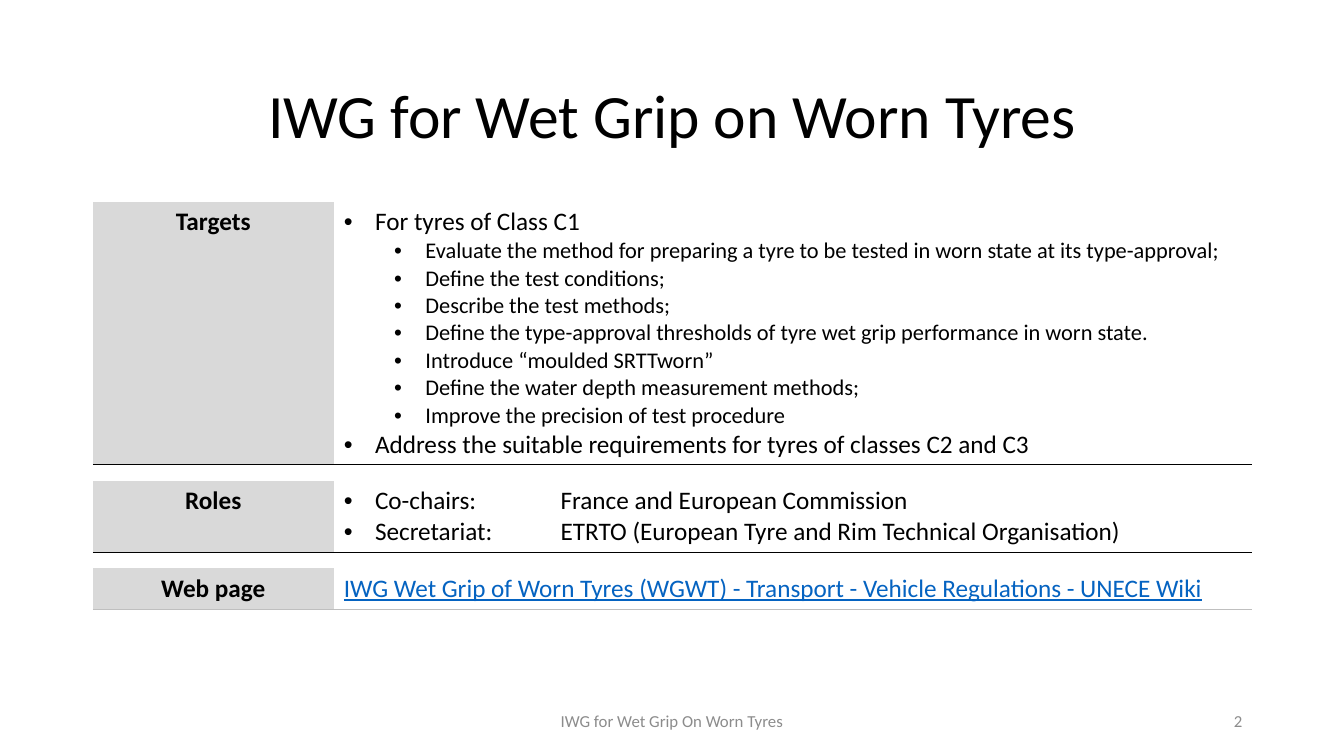
from dataclasses import dataclass
from lxml import etree
from pptx import Presentation
from pptx.dml.color import RGBColor
from pptx.enum.text import MSO_ANCHOR, PP_ALIGN
from pptx.oxml.ns import qn
from pptx.util import Inches, Pt

LEFT, MID, RIGHT = PP_ALIGN.LEFT, PP_ALIGN.CENTER, PP_ALIGN.RIGHT
MIDDLE = MSO_ANCHOR.MIDDLE

TITLE = "IWG for Wet Grip on Worn Tyres"
FOOTER = "IWG for Wet Grip On Worn Tyres"
PAGE = "2"
# Each line is (level, text); level None is plain linked text.
TARGETS = [
    (0, "For tyres of Class C1"),
    (1, "Evaluate the method for preparing a tyre to be tested in worn state at its type-approval;"),
    (1, "Define the test conditions;"),
    (1, "Describe the test methods;"),
    (1, "Define the type-approval thresholds of tyre wet grip performance in worn state."),
    (1, "Introduce “moulded SRTTworn”"),
    (1, "Define the water depth measurement methods;"),
    (1, "Improve the precision of test procedure"),
    (0, "Address the suitable requirements for tyres of classes C2 and C3"),
]
ROLES = [
    (0, "Co-chairs:\tFrance and European Commission"),
    (0, "Secretariat:\tETRTO (European Tyre and Rim Technical Organisation)"),
]
WEB = [(None, "IWG Wet Grip of Worn Tyres (WGWT) - Transport - Vehicle Regulations - UNECE Wiki")]


@dataclass(frozen=True)
class Theme:
    font: str = "Calibri"
    ink: str = "000000"
    link: str = "0563C1"
    label: str = "D9D9D9"
    pale: str = "BFBFBF"
    muted: str = "8C8C8C"
    title: int = 44
    body: int = 18
    sub: int = 16
    foot: int = 12
    gap: int = 4


THEME = Theme()
# Label, lines, row height, rule colour
ROWS = [
    ("Targets", TARGETS, 2.61, THEME.ink),
    ("Roles", ROLES, 0.71, THEME.ink),
    ("Web page", WEB, 0.41, THEME.pale),
]
WIDE, HIGH = 13.33, 7.5
EDGE, SPAN = 0.92, 11.5
TOP, GAP = 2, 0.16
COLS = (2.39, 9.11)
HANG, STEP, TAB = 0.31, 0.5, 2.15
FOOT_TOP, FOOT_HIGH = 6.95, 0.4
FOOT_WIDE, PAGE_WIDE = 4.5, 3
PLAIN = "{2D5ABB26-0587-4C30-8999-92F81FD0307C}"


def style(para, size, color, align=LEFT, bold=False, line=False):
    para.alignment = align
    for run in para.runs:
        font = run.font
        font.name, font.size = THEME.font, Pt(size)
        font.bold, font.underline = bold, line
        font.color.rgb = RGBColor.from_string(color)


def put(slide, text, box, size, color, align):
    """Add one line of text, centred in height."""
    frame = slide.shapes.add_textbox(*map(Inches, box)).text_frame
    frame.word_wrap = True
    frame.vertical_anchor = MIDDLE
    frame.text = text
    style(frame.paragraphs[0], size, color, align)


def bullet(para, level):
    props = para._p.get_or_add_pPr()
    props.set("marL", str(Inches(HANG + STEP * level)))
    props.set("indent", str(-Inches(HANG)))
    etree.SubElement(props, qn("a:buFont")).set("typeface", "Arial")
    etree.SubElement(props, qn("a:buChar")).set("char", "•")
    if "\t" in para.text:
        tabs = etree.SubElement(props, qn("a:tabLst"))
        tab = etree.SubElement(tabs, qn("a:tab"))
        tab.set("pos", str(Inches(TAB)))
        tab.set("algn", "l")


def rule(cell, color):
    """Draw the bottom border; the cell's fill comes after it in the XML."""
    props = cell._tc.get_or_add_tcPr()
    edge = etree.Element(qn("a:lnB"), w=str(Pt(1)))
    fill = etree.SubElement(edge, qn("a:solidFill"))
    etree.SubElement(fill, qn("a:srgbClr")).set("val", color)
    props.insert(0, edge)


def write(cell, lines):
    frame = cell.text_frame
    for i, (level, text) in enumerate(lines):
        para = frame.add_paragraph() if i else frame.paragraphs[0]
        para.text = text
        if level is None:
            style(para, THEME.body, THEME.link, line=True)
        else:
            bullet(para, level)
            style(para, THEME.sub if level else THEME.body, THEME.ink)


def shrink(cell):
    """Make an empty cell low enough for a gap row."""
    cell.margin_top = cell.margin_bottom = 0
    end = etree.SubElement(cell.text_frame.paragraphs[0]._p, qn("a:endParaRPr"))
    end.set("sz", str(THEME.gap * 100))


def build(slide):
    count = 2 * len(ROWS) - 1
    total = sum(row[2] for row in ROWS) + GAP * (len(ROWS) - 1)
    box = map(Inches, (EDGE, TOP, SPAN, total))
    table = slide.shapes.add_table(count, len(COLS), *box).table
    table.first_row = table.horz_banding = False
    table._tbl.tblPr.find(qn("a:tableStyleId")).text = PLAIN
    for col, width in zip(table.columns, COLS):
        col.width = Inches(width)
    for cell in table.iter_cells():
        cell.fill.background()
    for i, (name, lines, height, color) in enumerate(ROWS):
        at = 2 * i
        table.rows[at].height = Inches(height)
        label, body = table.cell(at, 0), table.cell(at, 1)
        label.text = name
        style(label.text_frame.paragraphs[0], THEME.body, THEME.ink, MID, True)
        label.fill.solid()
        label.fill.fore_color.rgb = RGBColor.from_string(THEME.label)
        write(body, lines)
        for cell in (label, body):
            rule(cell, color)
        if at + 1 < count:
            table.rows[at + 1].height = Inches(GAP)
            for cell in table.rows[at + 1].cells:
                shrink(cell)


def main():
    deck = Presentation()
    deck.slide_width, deck.slide_height = Inches(WIDE), Inches(HIGH)
    slide = deck.slides.add_slide(deck.slide_layouts[6])
    put(slide, TITLE, (EDGE, 0.4, SPAN, 1.45), THEME.title, THEME.ink, MID)
    build(slide)
    foot = ((WIDE - FOOT_WIDE) / 2, FOOT_TOP, FOOT_WIDE, FOOT_HIGH)
    put(slide, FOOTER, foot, THEME.foot, THEME.muted, MID)
    page = (EDGE + SPAN - PAGE_WIDE, FOOT_TOP, PAGE_WIDE, FOOT_HIGH)
    put(slide, PAGE, page, THEME.foot, THEME.muted, RIGHT)
    deck.save("out.pptx")


if __name__ == "__main__":
    main()
